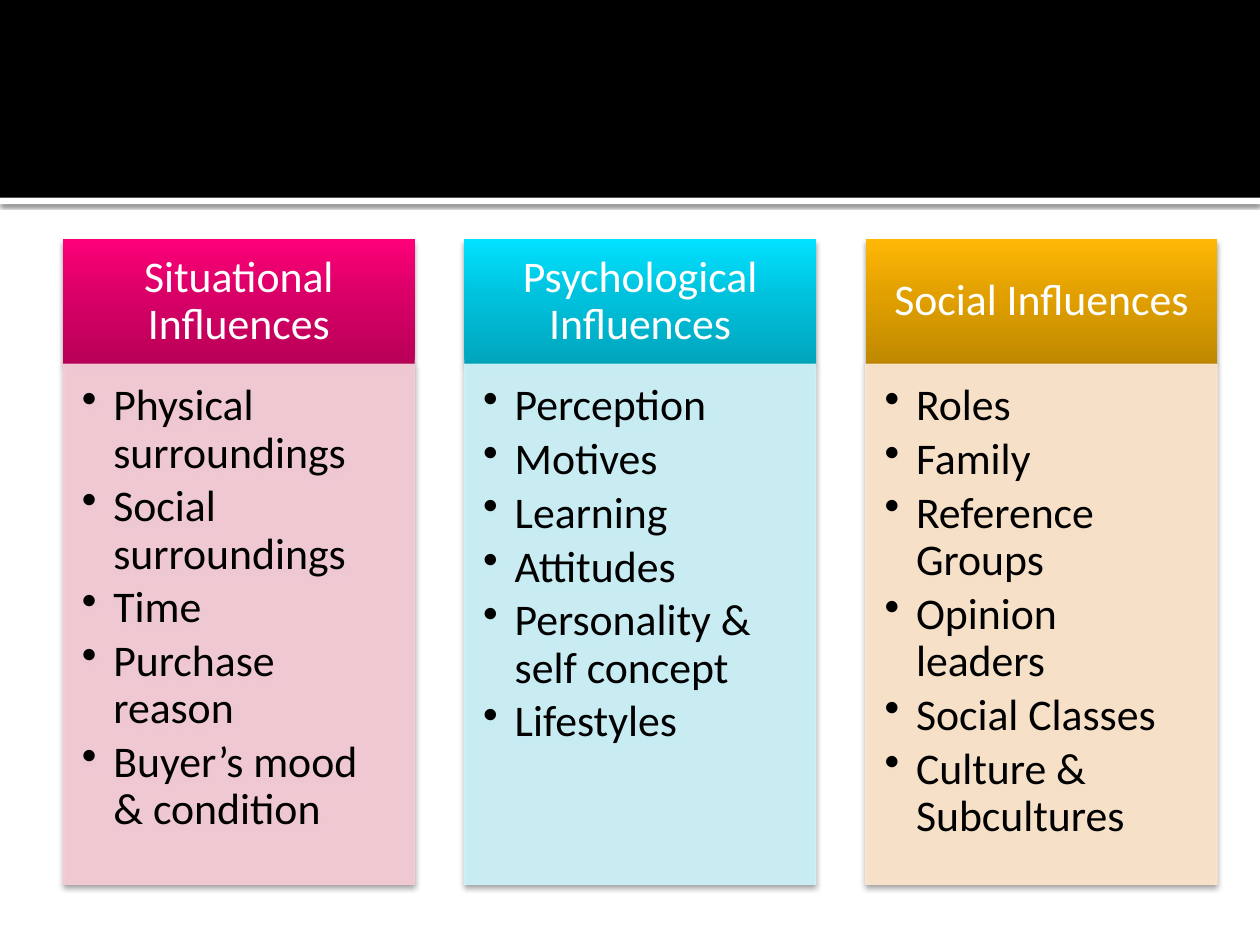
from copy import deepcopy

from lxml import etree
from pptx import Presentation
from pptx import util as u
from pptx.dml.color import RGBColor
from pptx.enum import shapes, text
from pptx.oxml.ns import qn

FONT, SIZE = "Calibri", 25
LEFT, PITCH, WIDTH = 0.5, 3.185, 2.79
HEAD_TOP, HEAD_H, BODY_H = 1.9, 0.99, 4.13
CARD_SHADOW = ("000000", 38, 3.1, 2)
STRIP_SHADOW = ("000000", 60, 2.5, 0.8)

COLUMNS = [
    ("Situational Influences", ("B80057", "D90067", "FD0078"), "F7CCD7",
     ["Physical surroundings", "Social surroundings", "Time",
      "Purchase reason", "Buyer’s mood & condition"]),
    ("Psychological Influences", ("00A5BC", "00C2DD", "02E1FF"), "CCF4FB",
     ["Perception", "Motives", "Learning", "Attitudes",
      "Personality & self concept", "Lifestyles"]),
    ("Social Influences", ("BF8800", "E1A000", "FFB807"), "FFE7CC",
     ["Roles", "Family", "Reference Groups", "Opinion leaders",
      "Social Classes", "Culture & Subcultures"]),
]


def rgb(color):
    """Turn a hex string into a colour."""
    return RGBColor.from_string(color)


def add_rect(s, x, y, w, h, shadow=None):
    """Add a rectangle without outline, with an optional downward shadow."""
    sp = s.shapes.add_shape(shapes.MSO_SHAPE.RECTANGLE, u.Inches(x),
                            u.Inches(y), u.Inches(w), u.Inches(h))
    sp.line.fill.background()
    sp.shadow.inherit = False
    if shadow:
        color, alpha, blur, dist = shadow
        effects = sp._element.spPr.find(qn("a:effectLst"))
        outer = etree.SubElement(effects, qn("a:outerShdw"), blurRad=str(u.Pt(blur)),
                                 dist=str(u.Pt(dist)), dir="5400000", rotWithShape="0")
        clr = etree.SubElement(outer, qn("a:srgbClr"), val=color)
        etree.SubElement(clr, qn("a:alpha"), val=str(alpha * 1000))
    return sp


def fill_solid(fill, color, alpha=100):
    """Give a fill one colour, with opacity in percent."""
    fill.solid()
    fill.fore_color.rgb = rgb(color)
    if alpha < 100:
        clr = fill._xPr.find(qn("a:solidFill")).find(qn("a:srgbClr"))
        etree.SubElement(clr, qn("a:alpha"), val=str(alpha * 1000))


def fill_gradient(sp, colors):
    """Fill a shape with three colours from bottom to top."""
    sp.fill.gradient()
    sp.fill.gradient_angle = 90
    stops = sp._element.spPr.find(qn("a:gradFill")).find(qn("a:gsLst"))
    stops.append(deepcopy(stops[0]))
    for stop, color, pos in zip(sp.fill.gradient_stops, colors, (0, 0.55, 1)):
        stop.color.rgb = rgb(color)
        stop.position = pos


def set_frame(sp, anchor, margins):
    """Set wrapping, anchor and margins, and return the text frame."""
    tf = sp.text_frame
    tf.word_wrap = True
    tf.vertical_anchor = anchor
    (tf.margin_left, tf.margin_top,
     tf.margin_right, tf.margin_bottom) = map(u.Inches, margins)
    return tf


def write(p, words, color, align):
    """Write one run into a paragraph."""
    p.alignment = align
    p.line_spacing = 0.9
    r = p.add_run()
    r.text = words
    r.font.name = FONT
    r.font.size = u.Pt(SIZE)
    r.font.color.rgb = rgb(color)


def add_bullet(p):
    """Give a paragraph a round bullet with a hanging indent."""
    pPr = p._p.get_or_add_pPr()
    pPr.set("marL", str(u.Inches(0.25)))
    pPr.set("indent", str(-u.Inches(0.25)))
    etree.SubElement(pPr, qn("a:buChar"), char="•")


def add_heading(s, x, title, colors):
    """Add the coloured heading of a column."""
    sp = add_rect(s, x, HEAD_TOP, WIDTH, HEAD_H, CARD_SHADOW)
    fill_gradient(sp, colors)
    tf = set_frame(sp, text.MSO_ANCHOR.MIDDLE, (0.19, 0.11, 0.19, 0.11))
    write(tf.paragraphs[0], title, "FFFFFF", text.PP_ALIGN.CENTER)


def add_list(s, x, items, color):
    """Add the bulleted panel of a column."""
    sp = add_rect(s, x, HEAD_TOP + HEAD_H, WIDTH, BODY_H, CARD_SHADOW)
    fill_solid(sp.fill, color, 90)
    fill_solid(sp.line.fill, color, 90)
    sp.line.width = u.Pt(0.5)
    tf = set_frame(sp, text.MSO_ANCHOR.TOP, (0.15, 0.15, 0.19, 0.22))
    for i, item in enumerate(items):
        p = tf.add_paragraph() if i else tf.paragraphs[0]
        write(p, item, "000000", text.PP_ALIGN.LEFT)
        p.space_after = u.Pt(SIZE * 0.15)
        add_bullet(p)


def main():
    """Build the slide and save it."""
    prs = Presentation()
    prs.slide_width, prs.slide_height = u.Inches(10), u.Inches(7.5)
    s = prs.slides.add_slide(prs.slide_layouts[6])
    fill_solid(s.background.fill, "FFFFFF")
    fill_solid(add_rect(s, 0, 1.57, 10, 0.05, STRIP_SHADOW).fill, "FFFFFF")
    fill_solid(add_rect(s, 0, 0, 10, 1.57).fill, "000000")
    for i, (title, gradient, tint, items) in enumerate(COLUMNS):
        x = LEFT + i * PITCH
        add_heading(s, x, title, gradient)
        add_list(s, x, items, tint)
    prs.save("out.pptx")


if __name__ == "__main__":
    main()
